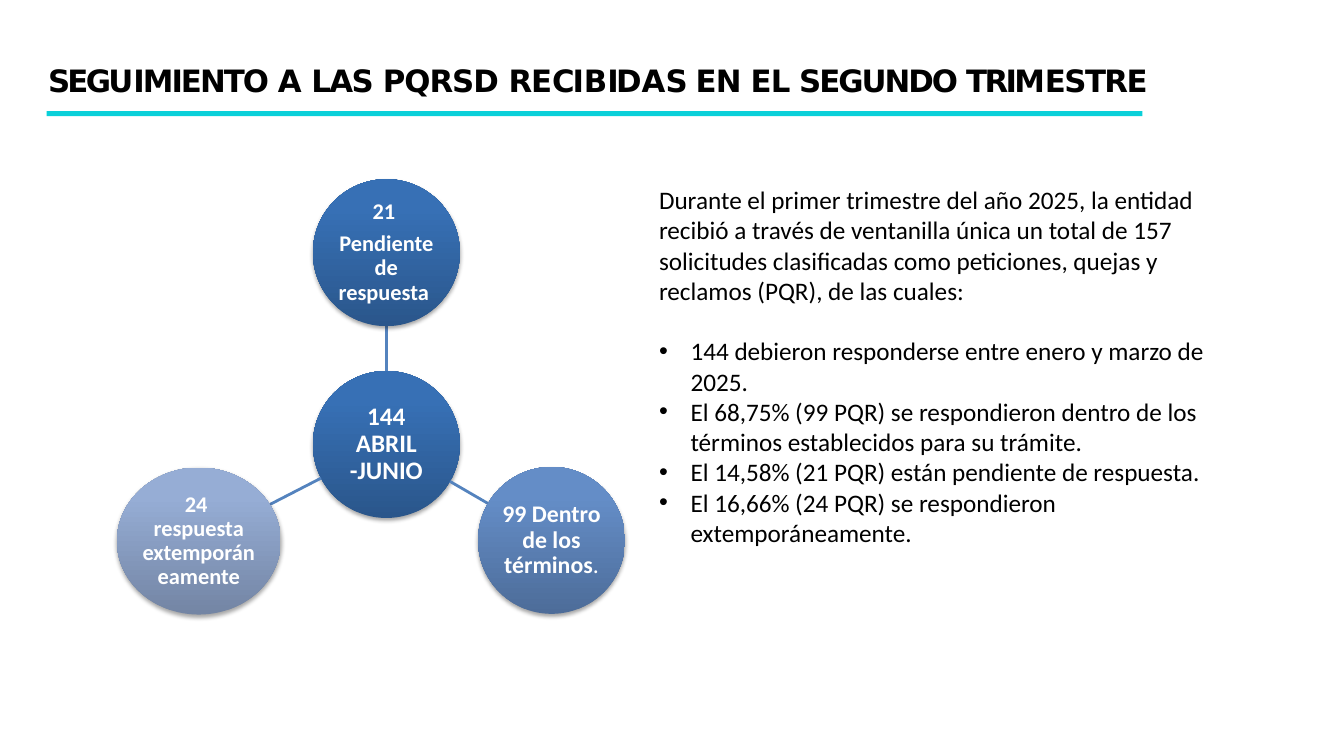
from math import hypot

from lxml import etree
from pptx import Presentation
from pptx import util as u
from pptx.dml import color
from pptx.enum import shapes, text
from pptx.oxml import ns, parse_xml

Pt = u.Pt
CIRCLE = 105
DARK = ("2A568B", "3770B5", "3570B8")
MEDIUM = ("4D6C99", "648DC7", "638DCA")
LIGHT = ("7385A4", "96ADD5", "95ADD7")

# Title runs with their letter spacing in hundredths of a point
TITLE_RUNS = [
    ("SEGU", -190), ("IMIENTO ", -140), ("A ", -70), ("LAS ", -110),
    ("PQRSD ", -70), ("RE", -80), ("CI", -160), ("B", -200), ("ID", -190),
    ("A", -220), ("S ", -190), ("EN EL", -60), (" SEGUNDO", -140),
    (" TRIM", -190), ("ESTRE", -110),
]
INTRODUCTION = (
    "Durante el primer trimestre del año 2025, la entidad recibió a través de "
    "ventanilla única un total de 157 solicitudes clasificadas como peticiones, "
    "quejas y reclamos (PQR), de las cuales:"
)
BULLETS = [
    "144 debieron responderse entre enero y marzo de 2025.",
    "El 68,75% (99 PQR) se respondieron dentro de los términos establecidos "
    "para su trámite.",
    "El 14,58% (21 PQR) están pendiente de respuesta.",
    "El 16,66% (24 PQR) se respondieron extemporáneamente.",
]

# Centre x, centre y, width, gradient, paragraphs of (text, size, bold) runs
HUB = (276, 317.5, CIRCLE, DARK, [[("144 ABRIL -JUNIO", 18, True)]])
NODES = [
    (276, 180.5, CIRCLE, DARK,
     [[("21 ", 16, True)], [("Pendiente de respuesta ", 16, True)]]),
    (394, 386, CIRCLE, MEDIUM,
     [[("99 Dentro de los términos", 17, True), (".", 17, False)]]),
    (142, 386.5, 117, LIGHT,
     [[("24 ", 16, True), (" ", 12, True), ("respuesta", 16, True),
       (" ", 12, True), ("extemporáneamente", 16, True)]]),
]


def rgb(value):
    return color.RGBColor.from_string(value)


def apply(target, values):
    for name, value in values.items():
        setattr(target, name, value)


def add_run(paragraph, words, size, font="Calibri", fill="000000", bold=False):
    run = paragraph.add_run()
    run.text = words
    apply(run.font, {"name": font, "size": Pt(size), "bold": bold})
    run.font.color.rgb = rgb(fill)
    return run


def format_frame(frame, inset, **values):
    sides = ("margin_left", "margin_top", "margin_right", "margin_bottom")
    apply(frame, {"word_wrap": True, **dict(zip(sides, map(Pt, inset))), **values})


def add_title(slide):
    title = slide.shapes.title
    apply(title, {"left": Pt(33.4), "top": Pt(43.2),
                  "width": Pt(825), "height": Pt(27.4)})
    format_frame(title.text_frame, (0.9, 0.9, 0, 0),
                 vertical_anchor=text.MSO_ANCHOR.TOP,
                 auto_size=text.MSO_AUTO_SIZE.SHAPE_TO_FIT_TEXT)
    paragraph = title.text_frame.paragraphs[0]
    paragraph.alignment = text.PP_ALIGN.LEFT
    for words, spacing in TITLE_RUNS:
        run = add_run(paragraph, words, 22, "DejaVu Sans", bold=True)
        run.font._element.set("spc", str(spacing))


def add_rule(slide):
    rule = slide.shapes.add_shape(shapes.MSO_SHAPE.RECTANGLE,
                                  Pt(33.4), Pt(79.4), Pt(782.6), Pt(3.6))
    rule.shadow.inherit = False
    rule.fill.solid()
    rule.fill.fore_color.rgb = rgb("0AD0D9")
    rule.line.fill.background()


def add_bullet(paragraph):
    properties = paragraph._p.get_or_add_pPr()
    properties.set("marL", str(Pt(22.5)))
    properties.set("indent", str(-Pt(22.5)))
    etree.SubElement(properties, ns.qn("a:buFont")).set("typeface", "Arial")
    etree.SubElement(properties, ns.qn("a:buChar")).set("char", "•")


def add_body(slide):
    box = slide.shapes.add_textbox(Pt(463.7), Pt(128.2), Pt(417.6), Pt(269.3))
    frame = box.text_frame
    format_frame(frame, (7.2, 3.6, 7.2, 3.6),
                 auto_size=text.MSO_AUTO_SIZE.SHAPE_TO_FIT_TEXT)
    add_run(frame.paragraphs[0], INTRODUCTION, 18)
    for index, words in enumerate(BULLETS):
        paragraph = frame.add_paragraph()
        add_bullet(paragraph)
        if index == 0:
            paragraph.space_before = Pt(21.6)
        add_run(paragraph, words, 18)


def fill_gradient(shape, colors):
    shape.fill.gradient()
    gradient = shape._element.spPr.find(ns.qn("a:gradFill"))
    stops = "".join(
        f'<a:gs pos="{position}"><a:srgbClr val="{value}"/></a:gs>'
        for position, value in zip((0, 80000, 100000), colors))
    gradient.getparent().replace(gradient, parse_xml(
        f'<a:gradFill {ns.nsdecls("a")} rotWithShape="1"><a:gsLst>{stops}'
        '</a:gsLst><a:lin ang="16200000" scaled="0"/></a:gradFill>'))


def add_shadow(shape):
    shape.shadow.inherit = False
    effects = shape._element.spPr.find(ns.qn("a:effectLst"))
    effects.append(parse_xml(
        f'<a:outerShdw {ns.nsdecls("a")} blurRad="{Pt(3.1)}" dist="{Pt(1.8)}" '
        'dir="5400000" rotWithShape="0"><a:srgbClr val="000000">'
        '<a:alpha val="35000"/></a:srgbClr></a:outerShdw>'))


def add_circle(slide, circle):
    x, y, width, colors, paragraphs = circle
    shape = slide.shapes.add_shape(
        shapes.MSO_SHAPE.OVAL, Pt(x - width / 2), Pt(y - CIRCLE / 2),
        Pt(width), Pt(CIRCLE))
    fill_gradient(shape, colors)
    shape.line.fill.background()
    add_shadow(shape)
    frame = shape.text_frame
    format_frame(frame, (0.8,) * 4, vertical_anchor=text.MSO_ANCHOR.MIDDLE)
    for index, runs in enumerate(paragraphs):
        paragraph = frame.add_paragraph() if index else frame.paragraphs[0]
        apply(paragraph, {"alignment": text.PP_ALIGN.CENTER, "line_spacing": 0.9,
                          "space_after": Pt(runs[0][1] * 0.35)})
        for words, size, bold in runs:
            add_run(paragraph, words, size, fill="FFFFFF", bold=bold)


def edge_point(circle, target):
    """Point where the line towards the target leaves the circle."""
    x, y, width = circle[:3]
    dx, dy = target[0] - x, target[1] - y
    scale = 1 / hypot(dx / (width / 2), dy / (CIRCLE / 2))
    return Pt(x + dx * scale), Pt(y + dy * scale)


def add_spoke(slide, node):
    spoke = slide.shapes.add_connector(
        shapes.MSO_CONNECTOR.STRAIGHT, *edge_point(HUB, node), *edge_point(node, HUB))
    spoke.line.width = Pt(2)
    spoke.line.color.rgb = rgb("5483BE")
    etree.SubElement(spoke._element.spPr, ns.qn("a:effectLst"))


def main():
    presentation = Presentation()
    apply(presentation, {"slide_width": Pt(960), "slide_height": Pt(540)})
    slide = presentation.slides.add_slide(presentation.slide_layouts[5])

    # Heading and explanation
    add_title(slide)
    add_rule(slide)
    add_body(slide)

    # Radial diagram
    add_circle(slide, HUB)
    for node in NODES:
        add_spoke(slide, node)
        add_circle(slide, node)

    presentation.save("out.pptx")


if __name__ == "__main__":
    main()
